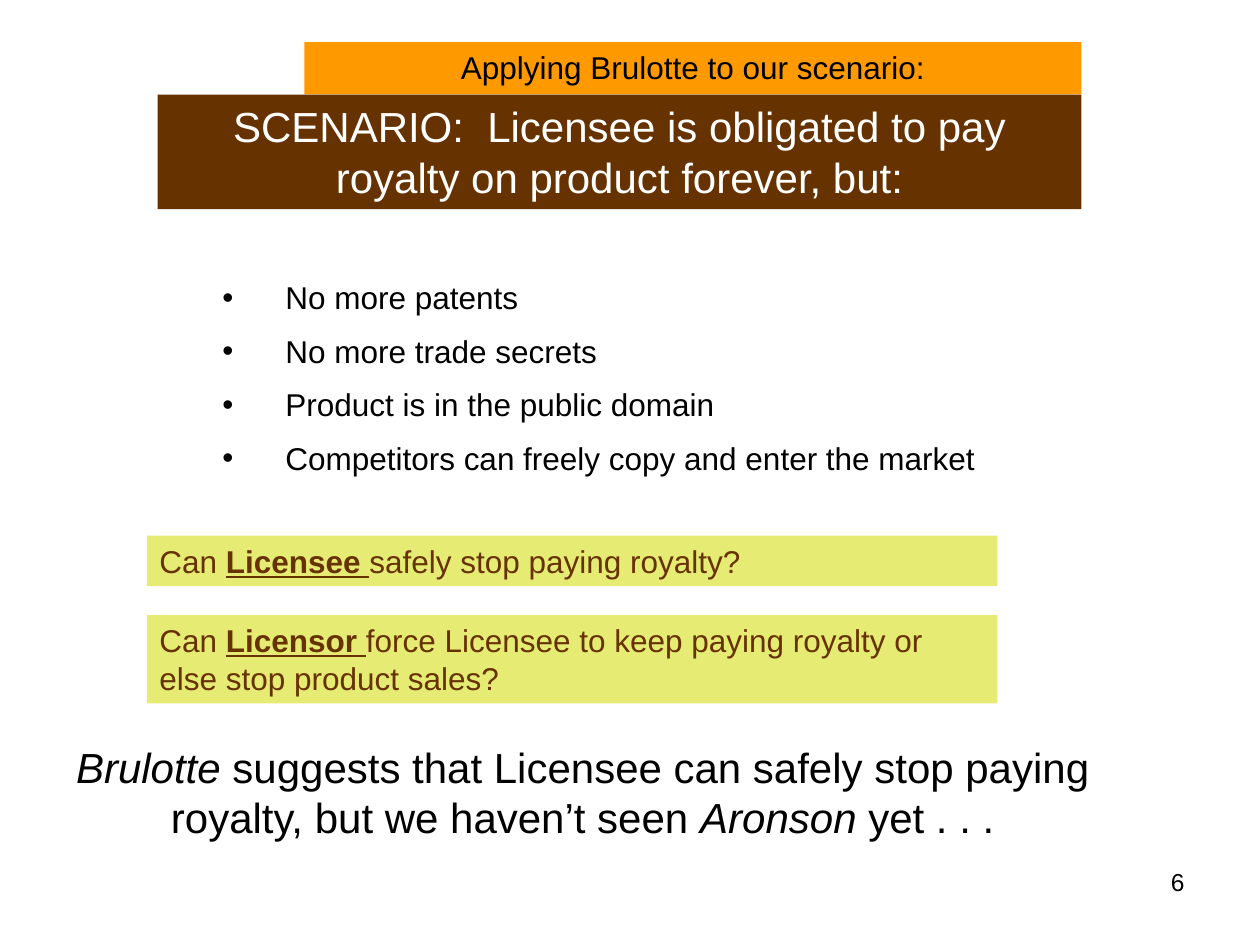
from dataclasses import dataclass

from lxml import etree
from pptx import Presentation
from pptx.dml.color import RGBColor
from pptx.enum.shapes import MSO_SHAPE
from pptx.enum.text import MSO_ANCHOR, MSO_AUTO_SIZE, PP_ALIGN
from pptx.oxml.ns import qn
from pptx.util import Pt

LEFT, CENTER, RIGHT = PP_ALIGN.LEFT, PP_ALIGN.CENTER, PP_ALIGN.RIGHT
RECTANGLE = MSO_SHAPE.RECTANGLE
TOP = MSO_ANCHOR.TOP
NO_AUTO_SIZE = MSO_AUTO_SIZE.NONE
TITLE_ONLY = 5


@dataclass(frozen=True)
class Theme:
    font: str = "Arial"
    black: RGBColor = RGBColor(0x00, 0x00, 0x00)
    white: RGBColor = RGBColor(0xFF, 0xFF, 0xFF)
    brown: RGBColor = RGBColor(0x66, 0x33, 0x00)
    orange: RGBColor = RGBColor(0xFF, 0x99, 0x00)
    lime: RGBColor = RGBColor(0xE6, 0xEB, 0x74)
    large: int = 24
    body: int = 18
    small: int = 14


THEME = Theme()


def write_text(shape, paragraphs, size=THEME.body, color=THEME.black,
               align=LEFT, space_before=0, bullet=None, indent=0):
    frame = shape.text_frame
    frame.word_wrap = True
    frame.auto_size = NO_AUTO_SIZE
    frame.vertical_anchor = TOP
    for index, runs in enumerate(paragraphs):
        paragraph = frame.add_paragraph() if index else frame.paragraphs[0]
        paragraph.alignment = align
        paragraph.space_before = Pt(space_before if index else 0)
        for text, style in runs:
            run = paragraph.add_run()
            run.text = text
            run.font.name = THEME.font
            run.font.size = Pt(size)
            run.font.color.rgb = color
            run.font.bold = style == "strong"
            run.font.underline = style == "strong"
            run.font.italic = style == "italic"
        if bullet:
            properties = paragraph._p.get_or_add_pPr()
            properties.set("marL", str(Pt(indent)))
            properties.set("indent", str(-Pt(indent)))
            etree.SubElement(properties, qn("a:buFont")).set("typeface", THEME.font)
            etree.SubElement(properties, qn("a:buChar")).set("char", bullet)


def add_text(slide, box, paragraphs, **text_format):
    shape = slide.shapes.add_textbox(*map(Pt, box))
    write_text(shape, paragraphs, **text_format)


def add_bar(slide, box, fill, paragraphs, **text_format):
    shape = slide.shapes.add_shape(RECTANGLE, *map(Pt, box))
    shape.shadow.inherit = False
    shape.fill.solid()
    shape.fill.fore_color.rgb = fill
    shape.line.fill.background()
    write_text(shape, paragraphs, **text_format)


def add_header(slide, box):
    left, top, width, height = box
    title_indent, title_height = 84, 30
    title = slide.shapes.title
    title.left, title.top = Pt(left + title_indent), Pt(top)
    title.width, title.height = Pt(width - title_indent), Pt(title_height)
    title.fill.solid()
    title.fill.fore_color.rgb = THEME.orange
    write_text(title, [[("Applying Brulotte to our scenario:", None)]], align=CENTER)
    add_bar(slide, (left, top + title_height, width, height - title_height), THEME.brown,
            [[("SCENARIO:  Licensee is obligated to pay royalty on product forever, but:",
               None)]],
            size=THEME.large, color=THEME.white, align=CENTER)


def add_facts(slide, box):
    facts = (
        "No more patents",
        "No more trade secrets",
        "Product is in the public domain",
        "Competitors can freely copy and enter the market",
    )
    add_text(slide, box, [[(fact, None)] for fact in facts],
             space_before=9, bullet="•", indent=36)


def add_questions(slide, box):
    left, top, width, height = box
    first_height, gap = 29, 16.5
    second_top = first_height + gap
    questions = (
        (0, first_height, "Licensee ", "safely stop paying royalty?"),
        (second_top, height - second_top, "Licensor ",
         "force Licensee to keep paying royalty or else stop product sales?"),
    )
    for offset, bar_height, party, rest in questions:
        add_bar(slide, (left, top + offset, width, bar_height), THEME.lime,
                [[("Can ", None), (party, "strong"), (rest, None)]], color=THEME.brown)


def add_conclusion(slide, box):
    add_text(slide, box, [[
        ("Brulotte ", "italic"),
        ("suggests that Licensee can safely stop paying royalty, but we haven’t seen ", None),
        ("Aronson ", "italic"),
        ("yet . . .", None),
    ]], size=THEME.large, align=CENTER)


def add_page_number(slide, box):
    add_text(slide, box, [[("6", None)]], size=THEME.small, align=RIGHT)


def main():
    presentation = Presentation()
    presentation.slide_width, presentation.slide_height = Pt(720), Pt(540)
    slide = presentation.slides.add_slide(presentation.slide_layouts[TITLE_ONLY])
    add_header(slide, (90, 24, 528, 95.5))
    add_facts(slide, (120, 155.5, 486, 127))
    add_questions(slide, (84, 306, 486, 96))
    add_conclusion(slide, (30, 420, 606, 65.5))
    add_page_number(slide, (516, 492, 168, 37.5))
    presentation.save("out.pptx")


if __name__ == "__main__":
    main()
